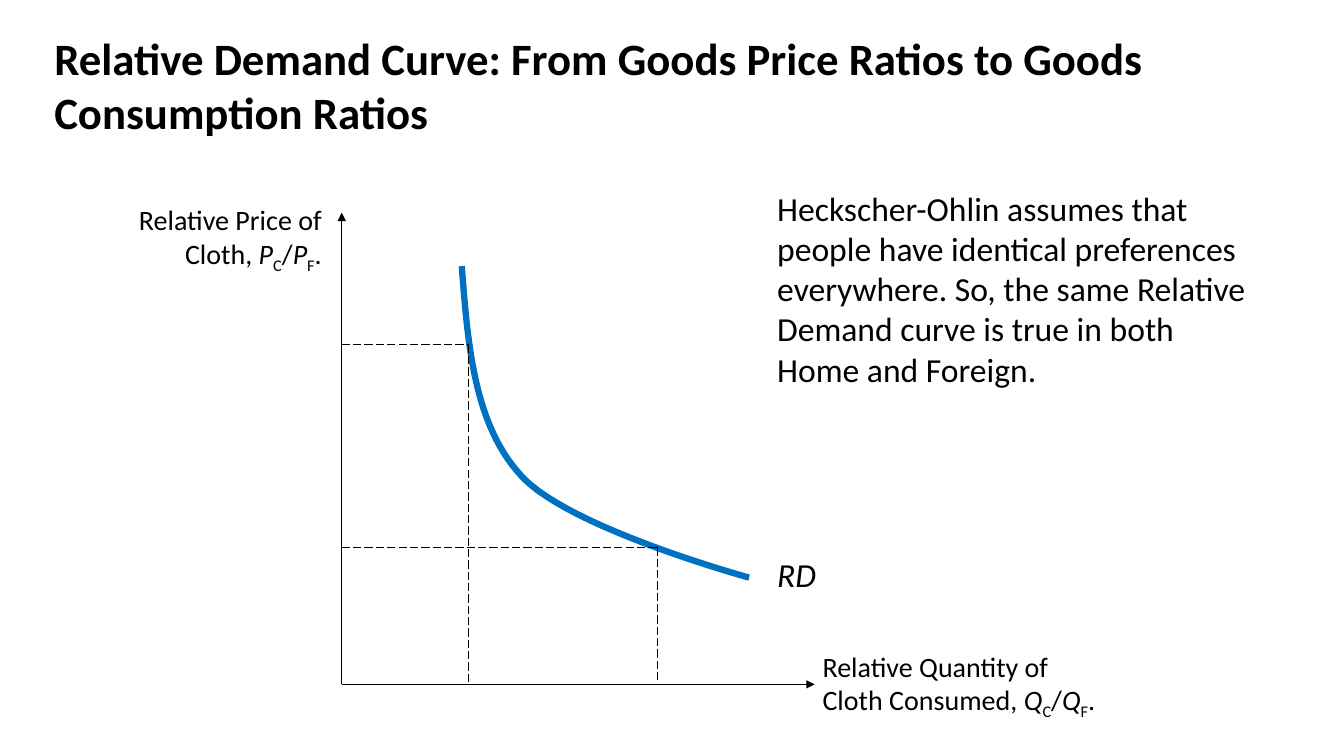
from dataclasses import dataclass

from lxml.etree import SubElement
from pptx import Presentation
from pptx.dml.color import RGBColor as RGB
from pptx.enum.dml import MSO_LINE as DASH
from pptx.enum.shapes import MSO_CONNECTOR as CONN
from pptx.enum.text import MSO_ANCHOR as ANCHOR, MSO_AUTO_SIZE as FIT, PP_ALIGN as ALIGN
from pptx.oxml.ns import qn
from pptx.util import Pt

EMU_PER_PX = 9144  # 100 px to the inch


@dataclass(frozen=True)
class Theme:
    font: str = "Calibri"
    ink: RGB = RGB(0x00, 0x00, 0x00)
    curve: RGB = RGB(0x00, 0x70, 0xC0)
    title: int = 32
    body: int = 24
    axis: int = 20
    thin: float = 0.75
    thick: float = 4.5
    subscript: int = -25


THEME = Theme()

ORIGIN_X, ORIGIN_Y = 339, 679
AXIS_RIGHT, AXIS_TOP = 808, 211
# Points on the curve: (relative quantity, relative price)
RATIOS = [(465, 342), (652, 543)]
CURVE_START = (458, 264)
CURVE_BEZIERS = [
    ((464, 342), (470, 421), (517, 472)),
    ((564, 524), (743, 573), (743, 573)),
]


def px(n):
    return round(n * EMU_PER_PX)


def add_text(s, box, runs, size, align=ALIGN.LEFT, anchor=ANCHOR.TOP,
             fit=FIT.SHAPE_TO_FIT_TEXT, bold=False):
    """Add a text box; runs are (text, style) with style "", "italic" or "sub"."""
    tf = s.shapes.add_textbox(*map(px, box)).text_frame
    tf.word_wrap = True
    tf.auto_size = fit
    tf.vertical_anchor = anchor
    p = tf.paragraphs[0]
    p.alignment = align
    for text, style in runs:
        r = p.add_run()
        r.text = text
        f = r.font
        f.name, f.size, f.bold = THEME.font, Pt(size), bold
        f.italic = style == "italic"
        f.color.rgb = THEME.ink
        if style == "sub":
            r._r.get_or_add_rPr().set("baseline", str(THEME.subscript * 1000))


def ratio_runs(lead, symbol):
    """Runs for a label that ends in the cloth-to-food ratio of a symbol."""
    return [(lead, ""), (symbol, "italic"), ("C", "sub"), ("/", ""),
            (symbol, "italic"), ("F", "sub"), (".", "")]


def add_line(s, start, end, dash=None, arrow=False):
    c = s.shapes.add_connector(CONN.STRAIGHT, *map(px, (*start, *end)))
    c.line.color.rgb = THEME.ink
    c.line.width = Pt(THEME.thin)
    if dash:
        c.line.dash_style = dash
    if arrow:
        SubElement(c.line._get_or_add_ln(), qn("a:tailEnd"), type="triangle")
    SubElement(c._element.spPr, qn("a:effectLst"))


def bezier_points(p0, p1, p2, p3, steps=40):
    for i in range(1, steps + 1):
        t = i / steps
        u = 1 - t
        yield tuple(
            px(u**3 * a + 3 * u * u * t * b + 3 * u * t * t * c + t**3 * d)
            for a, b, c, d in zip(p0, p1, p2, p3)
        )


def add_curve(s, start, beziers):
    builder = s.shapes.build_freeform(*map(px, start))
    for bezier in beziers:
        builder.add_line_segments(bezier_points(start, *bezier), close=False)
        start = bezier[-1]
    sp = builder.convert_to_shape()
    sp.shadow.inherit = False
    sp.fill.background()
    sp.line.color.rgb = THEME.curve
    sp.line.width = Pt(THEME.thick)


def add_guides(s, quantity, price):
    """Dashed lines from a point on the curve to both axes."""
    add_line(s, (ORIGIN_X, price), (quantity, price), dash=DASH.LONG_DASH)
    add_line(s, (quantity, price), (quantity, ORIGIN_Y), dash=DASH.LONG_DASH)


def main():
    prs = Presentation()
    prs.slide_width, prs.slide_height = px(1333), px(750)
    s = prs.slides.add_slide(prs.slide_layouts[6])

    add_text(s, (44, 33, 1256, 109),
             [("Relative Demand Curve: From Goods Price Ratios to Goods "
               "Consumption Ratios", "")],
             THEME.title, anchor=ANCHOR.BOTTOM, fit=FIT.NONE, bold=True)

    for end in ((AXIS_RIGHT, ORIGIN_Y), (ORIGIN_X, AXIS_TOP)):
        add_line(s, (ORIGIN_X, ORIGIN_Y), end, arrow=True)
    add_curve(s, CURVE_START, CURVE_BEZIERS)
    for quantity, price in RATIOS:
        add_guides(s, quantity, price)

    add_text(s, (761, 545, 72, 50), [("RD", "italic")], THEME.body)
    add_text(s, (81, 196, 248, 77), ratio_runs("Relative Price of Cloth, ", "P"),
             THEME.axis, align=ALIGN.RIGHT)
    add_text(s, (806, 639, 304, 77),
             ratio_runs("Relative Quantity of Cloth Consumed, ", "Q"), THEME.axis)
    add_text(s, (761, 181, 491, 212),
             [("Heckscher-Ohlin assumes that people have identical preferences "
               "everywhere. So, the same Relative Demand curve is true in both "
               "Home and Foreign.", "")], THEME.body)

    prs.save("out.pptx")


if __name__ == "__main__":
    main()
